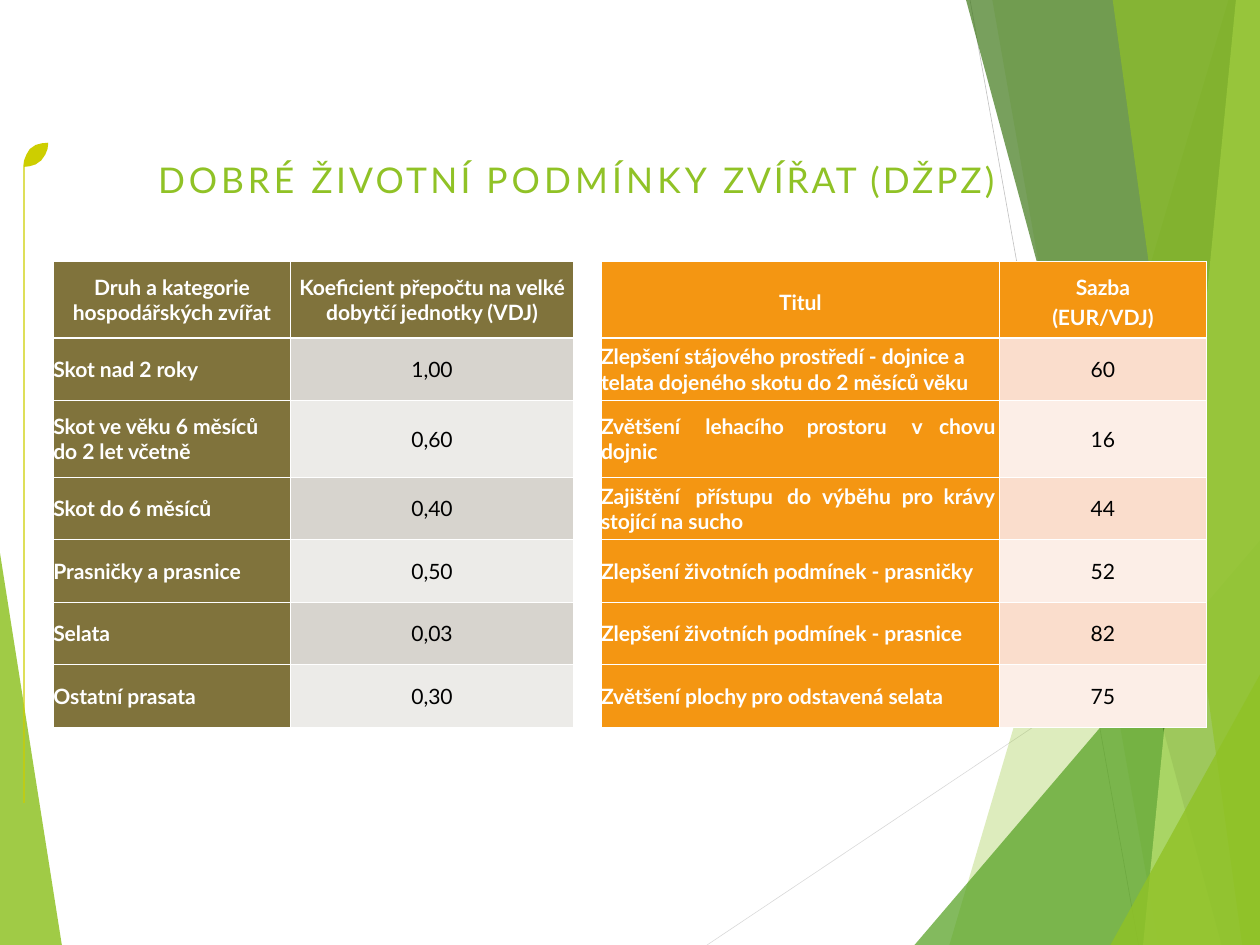
from dataclasses import dataclass

from lxml.etree import SubElement
from pptx import Presentation
from pptx.dml.color import RGBColor
from pptx.enum.shapes import MSO_CONNECTOR
from pptx.enum.text import MSO_ANCHOR, PP_ALIGN
from pptx.oxml.ns import qn
from pptx.util import Inches, Pt

WIDE, HIGH = 21.99, 16.49
FONT = "Lato"
BODY = 26.5
HUES = {
    "lime": "90C226", "green": "54A021", "dark": "3F7819", "pale": "C0E474",
    "leaf": "CDCE00", "mist": "D9D9D9", "grey": "BFBFBF",
    "olive": "80733C", "stone": "D7D4CE", "chalk": "ECEBE8",
    "orange": "F49612", "peach": "FADDCC", "cream": "FCEEE7",
    "white": "FFFFFF", "black": "000000",
}
Spot = tuple[float, float]


@dataclass
class Facet:
    hue: str
    alpha: int
    spots: list[Spot]


@dataclass
class Ray:
    hue: str
    start: Spot
    end: Spot


@dataclass
class Grid:
    left: float
    cols: list[float]
    hue: str
    bands: tuple[str, str]
    lead: float
    head: list[str]
    rows: list[tuple[str, str]]
    stops: dict[int, list[float]]


# Lengths are percentages of the slide's width and height
def across(share: float) -> int:
    return Inches(WIDE * share / 100)


def down(share: float) -> int:
    return Inches(HIGH * share / 100)


def tint(name: str) -> RGBColor:
    return RGBColor.from_string(HUES[name])


def strip(top: float, foot: float) -> list[Spot]:
    """Full-height band between a slanted edge and the right side."""
    return [(top, 0), (foot, 100), (100, 100), (100, 0)]


# Background shapes
RAYS = [
    Ray("mist", (56.12, 100), (100, 60.9)),
    Ray("grey", (76.99, 0), (90.36, 100)),
]
FACETS = [
    Facet("lime", 85, [(0, 58.52), (4.91, 100), (0, 100)]),
    Facet("lime", 30, strip(97.5, 75.35)),
    Facet("lime", 20, strip(78.76, 91.95)),
    Facet("green", 72, [(72.58, 100), (100, 57.19), (100, 100)]),
    Facet("dark", 70, strip(76.67, 96.95)),
    Facet("pale", 70, strip(98.09, 90.72)),
    Facet("lime", 65, strip(88.31, 98.59)),
    Facet("lime", 80, [(88.13, 100), (100, 71.38), (100, 100)]),
    Facet("leaf", 100, [
        (3.82, 15.1), (3.32, 15.16), (2.82, 15.34), (2.36, 15.77),
        (2.09, 16.37), (1.91, 16.98), (1.86, 17.47), (1.86, 84.96),
        (1.96, 84.96), (1.96, 17.65), (2.36, 17.59), (2.82, 17.4),
        (3.27, 16.98), (3.59, 16.37), (3.77, 15.77), (3.82, 15.28)]),
]

# Title words with their letter spacing
TITLE = [("DOBRÉ ", 4.9), ("ŽIVOTNÍ ", 4.1), ("PODMÍNKY ", 5.2),
         ("ZVÍŘAT ", 3.5), ("(DŽPZ)", 3.7)]

# Tables
TOP = 27.65
ROWS = [8.13, 6.61, 8.13, 6.61, 6.61, 6.61, 6.61]
GRIDS = [
    Grid(4.23, [18.83, 22.46], "olive", ("stone", "chalk"), 1,
         ["Druh a kategorie\nhospodářských zvířat",
          "Koeficient přepočtu na velké\ndobytčí jednotky (VDJ)"],
         [("Skot nad 2 roky", "1,00"),
          ("Skot ve věku 6 měsíců\ndo 2 let včetně", "0,60"),
          ("Skot do 6 měsíců", "0,40"),
          ("Prasničky a prasnice", "0,50"),
          ("Selata", "0,03"),
          ("Ostatní prasata", "0,30")], {}),
    Grid(47.7, [31.65, 16.37], "orange", ("peach", "cream"), 1.2,
         ["Titul", "Sazba\n(EUR/VDJ)"],
         [("Zlepšení stájového prostředí - dojnice a\n"
           "telata dojeného skotu do 2 měsíců věku", "60"),
          ("Zvětšení\tlehacího\tprostoru\tv\tchovu\ndojnic", "16"),
          ("Zajištění\tpřístupu\tdo\tvýběhu\tpro\tkrávy\nstojící na sucho", "44"),
          ("Zlepšení životních podmínek - prasničky", "52"),
          ("Zlepšení životních podmínek - prasnice", "82"),
          ("Zvětšení plochy pro odstavená selata", "75")],
         {2: [8.28, 16.33, 24.65, 26.83],
          3: [7.5, 14.78, 17.55, 23.87, 27.19]}),
]


def draw_ray(slide, ray: Ray) -> None:
    (x1, y1), (x2, y2) = ray.start, ray.end
    line = slide.shapes.add_connector(
        MSO_CONNECTOR.STRAIGHT, across(x1), down(y1), across(x2), down(y2))
    line.line.color.rgb = tint(ray.hue)
    line.line.width = Pt(0.75)
    SubElement(line._element.spPr, qn("a:effectLst"))


def draw_facet(slide, facet: Facet) -> None:
    spots = [(across(x), down(y)) for x, y in facet.spots]
    pen = slide.shapes.build_freeform(*spots[0])
    pen.add_line_segments(spots[1:], close=True)
    shape = pen.convert_to_shape()
    shape.shadow.inherit = False
    shape.line.fill.background()
    shape.fill.solid()
    shape.fill.fore_color.rgb = tint(facet.hue)
    color = shape._element.spPr.find(qn("a:solidFill"))[0]
    SubElement(color, qn("a:alpha"), val=str(facet.alpha * 1000))


def add_run(para, text: str, size: float, hue: str, gap: float, bold: bool) -> None:
    run = para.add_run()
    run.text = text
    run.font.name, run.font.size, run.font.bold = FONT, Pt(size), bold
    run.font.color.rgb = tint(hue)
    run._r.get_or_add_rPr().set("spc", str(round(gap * 100)))


def draw_title(slide) -> None:
    title = slide.shapes.title
    title.left, title.top = across(11.05), down(15.16)
    title.width, title.height = across(67.99), down(6.06)
    frame = title.text_frame
    frame.word_wrap = True
    frame.vertical_anchor = MSO_ANCHOR.TOP
    frame.margin_left, frame.margin_top = across(1.5), down(1.52)
    frame.margin_right = frame.margin_bottom = 0
    para = frame.paragraphs[0]
    para.alignment = PP_ALIGN.LEFT
    for text, gap in TITLE:
        add_run(para, text, 44.5, "lime", gap, False)


def edge(cell, top: float, foot: float) -> None:
    props = cell._tc.get_or_add_tcPr()
    for side, width in zip("LRTB", (1, 1, top, foot)):
        line = SubElement(props, qn(f"a:ln{side}"), w=str(Pt(width)))
        fill = SubElement(line, qn("a:solidFill"))
        SubElement(fill, qn("a:srgbClr"), val=HUES["white"])


def draw_grid(slide, grid: Grid) -> None:
    table = slide.shapes.add_table(
        len(ROWS), len(grid.cols), across(grid.left), down(TOP),
        across(sum(grid.cols)), down(sum(ROWS))).table
    for col, width in zip(table.columns, grid.cols):
        col.width = across(width)
    for row, height in zip(table.rows, ROWS):
        row.height = down(height)
    for i, texts in enumerate([grid.head, *grid.rows]):
        for j, text in enumerate(texts):
            cell = table.cell(i, j)
            value = i > 0 and j > 0
            edge(cell, 3 if i == 1 else 1, 3 if i == 0 else 1)
            cell.fill.solid()
            cell.fill.fore_color.rgb = tint(grid.bands[(i - 1) % 2] if value else grid.hue)
            cell.margin_left = cell.margin_right = 0
            cell.margin_top = cell.margin_bottom = 0
            cell.vertical_anchor = MSO_ANCHOR.MIDDLE
            para = cell.text_frame.paragraphs[0]
            para.alignment = PP_ALIGN.CENTER if i == 0 or value else PP_ALIGN.LEFT
            if i == 0:
                para.line_spacing = grid.lead
            if j == 0 and i in grid.stops:
                tabs = SubElement(para._p.get_or_add_pPr(), qn("a:tabLst"))
                for stop in grid.stops[i]:
                    SubElement(tabs, qn("a:tab"), pos=str(across(stop)), algn="l")
            for k, part in enumerate(text.split("\n")):
                if k:
                    para.add_line_break()
                add_run(para, part, BODY, "black" if value else "white", -0.1, not value)


def main() -> None:
    deck = Presentation()
    deck.slide_width, deck.slide_height = Inches(WIDE), Inches(HIGH)
    slide = deck.slides.add_slide(deck.slide_layouts[5])
    for ray in RAYS:
        draw_ray(slide, ray)
    for facet in FACETS:
        draw_facet(slide, facet)
    draw_title(slide)
    for grid in GRIDS:
        draw_grid(slide, grid)
    deck.save("out.pptx")


if __name__ == "__main__":
    main()
